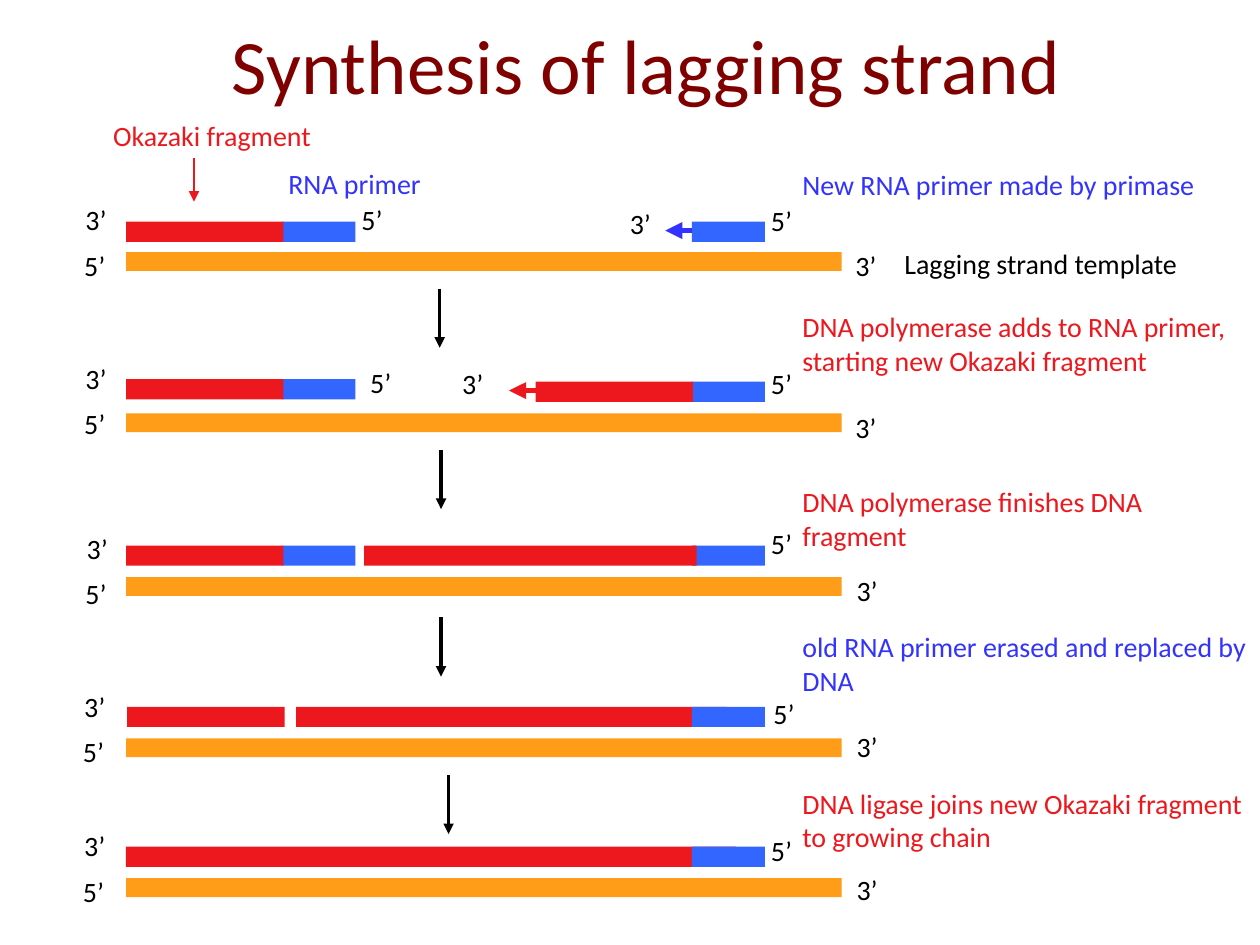
"""Build a slide on the five stages of lagging strand synthesis."""
import pptx
import pptx.dml.color
import pptx.enum.shapes
import pptx.enum.text
import pptx.oxml
import pptx.oxml.ns
import pptx.util

COLOURS = {"title": "800000", "template": "FF9D18", "dna": "ED181E", "rna": "3366FF",
           "primer": "3333FF", "text": "000000"}
FONT = "Calibri"
TITLE = "Synthesis of lagging strand"

TEMPLATE_LEFT, TEMPLATE_WIDTH, TEMPLATE_HEIGHT = 1, 5.68, 0.15
STRAND_HEIGHT = 0.16
LABEL_SIZE = (0.4, 0.37)
LABEL_GAP = 0.36
NOTE_LEFT, NOTE_WIDTH = 6.27, 3.74
STEP_LENGTH, HEAD_LENGTH = 0.47, 0.21

OLD_DNA, OLD_RNA = ("dna", 1, 1.25, 0), ("rna", 2.24, 0.58, 0)
NEW_RNA = ("rna", 5.49, 0.58, 0)

STAGES = [
    {"template": 2, "strand": 1.76, "parts": [OLD_RNA, OLD_DNA, NEW_RNA],
     "growth": (5.49, 1.83, "primer"), "step": None,
     "note": ("New RNA primer made by primase", 1.28, "primer"),
     "left": (0.58, 1.56), "five": (6.02, 1.57), "three": (6.69, 1.92),
     "inner": [("5’", 2.77, 1.56), ("3’", 4.9, 1.59)]},
    {"template": 3.28, "strand": 3.01,
     "parts": [OLD_RNA, OLD_DNA, ("rna", 5.49, 0.58, 0.02), ("dna", 4.25, 1.25, 0.02)],
     "growth": (4.25, 3.1, "dna"), "step": (3.49, 2.29),
     "note": ("DNA polymerase adds to RNA primer, starting new Okazaki fragment", 2.41, "dna"),
     "left": (0.58, 2.82), "five": (6.02, 2.86), "three": (6.69, 3.21),
     "inner": [("5’", 2.84, 2.85), ("3’", 3.57, 2.86)]},
    {"template": 4.58, "strand": 4.33,
     "parts": [OLD_RNA, OLD_DNA, NEW_RNA, ("dna", 2.89, 2.64, 0)],
     "growth": None, "step": (3.5, 3.57),
     "note": ("DNA polymerase finishes DNA fragment", 3.8, "dna"),
     "left": (0.59, 4.17), "five": (6.02, 4.13), "three": (6.7, 4.5), "inner": []},
    {"template": 5.86, "strand": 5.61,
     "parts": [("dna", 1.01, 1.25, 0), ("dna", 2.35, 3.42, 0), NEW_RNA],
     "growth": None, "step": (3.5, 4.9),
     "note": ("old RNA primer erased and replaced by DNA", 4.95, "primer"),
     "left": (0.57, 5.42), "five": (6.04, 5.48), "three": (6.7, 5.74), "inner": []},
    {"template": 6.97, "strand": 6.72, "parts": [("dna", 1, 4.84, 0), NEW_RNA],
     "growth": None, "step": (3.56, 6.15),
     "note": ("DNA ligase joins new Okazaki fragment to growing chain", 6.19, "dna"),
     "left": (0.57, 6.53), "five": (6.02, 6.57), "three": (6.7, 6.88), "inner": []},
]
CAPTIONS = [
    ("Okazaki fragment", 0.8, 0.89, 2.18, "dna"),
    ("RNA primer", 2.19, 1.27, 1.49, "primer"),
    ("Lagging strand template", 7.08, 1.91, 2.93, "text"),
]


def inches(*lengths):
    return [pptx.util.Inches(length) for length in lengths]


def colour(name):
    return pptx.dml.color.RGBColor.from_string(COLOURS[name])


def style(frame, size, name):
    for span in frame.paragraphs[0].runs:
        span.font.size = pptx.util.Pt(size)
        span.font.name = FONT
        span.font.color.rgb = colour(name)


def add_text(page, words, left, top, width, height, name="text", wrap=False):
    frame = page.shapes.add_textbox(*inches(left, top, width, height)).text_frame
    frame.text = words
    frame.word_wrap = wrap
    frame.auto_size = pptx.enum.text.MSO_AUTO_SIZE.SHAPE_TO_FIT_TEXT
    style(frame, 16, name)


def add_label(page, words, left, top):
    add_text(page, words, left, top, *LABEL_SIZE)


def add_bar(page, name, left, top, width, height):
    bar = page.shapes.add_shape(pptx.enum.shapes.MSO_SHAPE.RECTANGLE,
                                *inches(left, top, width, height))
    bar.fill.solid()
    bar.fill.fore_color.rgb = colour(name)
    bar.line.fill.background()
    bar.shadow.inherit = False


def add_arrow(page, start, end, name, weight):
    arrow = page.shapes.add_connector(pptx.enum.shapes.MSO_CONNECTOR.STRAIGHT,
                                      *inches(*start, *end))
    arrow.line.color.rgb = colour(name)
    arrow.line.width = pptx.util.Pt(weight)
    head = pptx.oxml.parse_xml(
        f'<a:tailEnd {pptx.oxml.ns.nsdecls("a")} type="triangle"/>')
    arrow.line._get_or_add_ln().append(head)
    properties = arrow._element.spPr
    properties.append(pptx.oxml.parse_xml(f'<a:effectLst {pptx.oxml.ns.nsdecls("a")}/>'))


def add_stage(page, stage):
    add_bar(page, "template", TEMPLATE_LEFT, stage["template"], TEMPLATE_WIDTH, TEMPLATE_HEIGHT)
    for name, left, width, drop in stage["parts"]:
        add_bar(page, name, left, stage["strand"] + drop, width, STRAND_HEIGHT)
    if stage["growth"]:
        left, top, name = stage["growth"]
        add_arrow(page, (left, top), (left - HEAD_LENGTH, top), name, 3.25)
    if stage["step"]:
        left, top = stage["step"]
        add_arrow(page, (left, top), (left, top + STEP_LENGTH), "text", 2)
    words, top, name = stage["note"]
    add_text(page, words, NOTE_LEFT, top, NOTE_WIDTH, 0.64, name, wrap=True)
    left, top = stage["left"]
    add_label(page, "3’", left, top)
    add_label(page, "5’", left - 0.01, top + LABEL_GAP)
    add_label(page, "5’", *stage["five"])
    add_label(page, "3’", *stage["three"])
    for label in stage["inner"]:
        add_label(page, *label)


def main():
    deck = pptx.Presentation()
    deck.slide_width, deck.slide_height = inches(10, 7.5)
    page = deck.slides.add_slide(deck.slide_layouts[5])
    title = page.shapes.title
    title.left, title.top, title.width, title.height = inches(0.88, -0.12, 8.5, 1.25)
    title.text_frame.text = TITLE
    title.text_frame.vertical_anchor = pptx.enum.text.MSO_ANCHOR.MIDDLE
    title.text_frame.paragraphs[0].alignment = pptx.enum.text.PP_ALIGN.CENTER
    style(title.text_frame, 44, "title")
    for stage in STAGES:
        add_stage(page, stage)
    for words, left, top, width, name in CAPTIONS:
        add_text(page, words, left, top, width, LABEL_SIZE[1], name)
    add_arrow(page, (1.54, 1.25), (1.54, 1.6), "dna", 0.75)
    deck.save("out.pptx")


if __name__ == "__main__":
    main()
